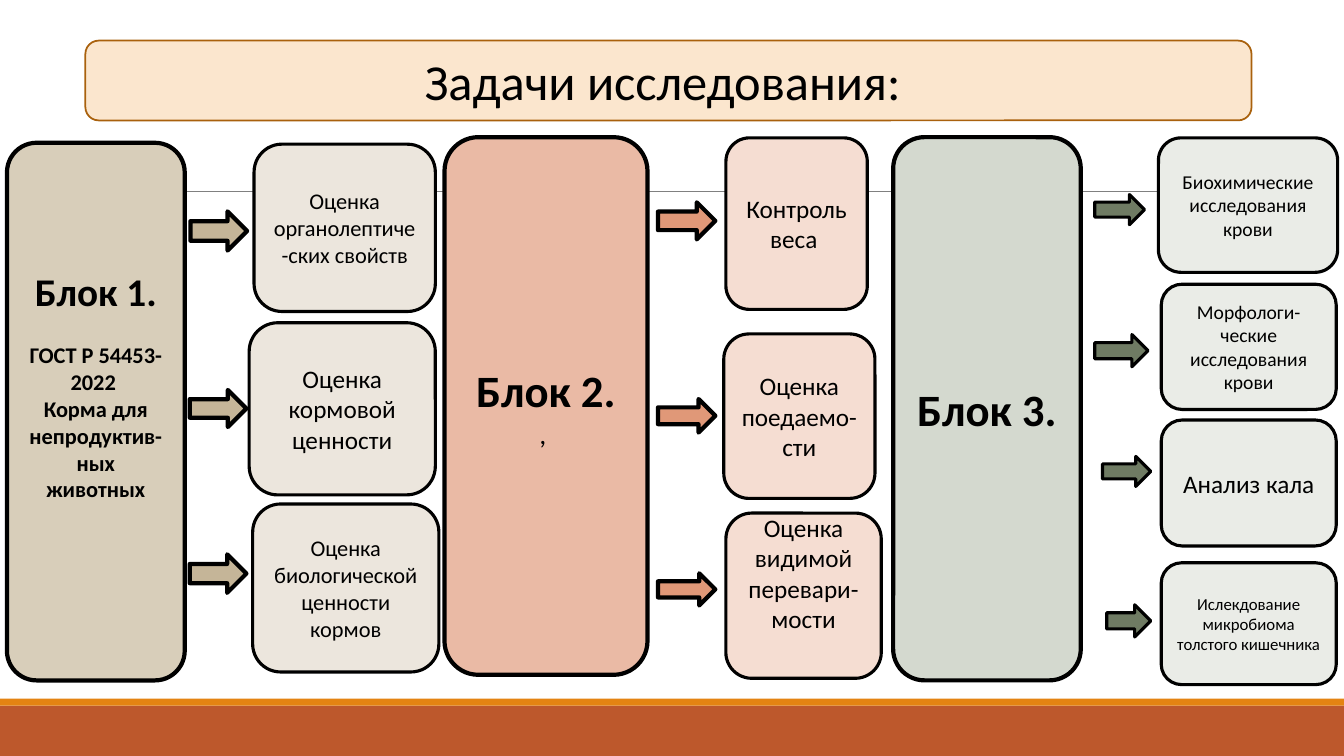
import pptx
import pptx.util
import pptx.dml.color
import pptx.enum.shapes
import pptx.enum.text
import pptx.oxml
from dataclasses import dataclass

Pt = pptx.util.Pt
Kind = pptx.enum.shapes.MSO_SHAPE


@dataclass(frozen=True)
class Theme:
    font: str = "Calibri"
    ink: str = "000000"
    rule: str = "808080"
    foot: str = "BD582C"
    strip: str = "E48312"
    peach: str = "FBE6CE"
    edge: str = "A9610D"
    sand: tuple = ("D8CEBA", "C5B598", "ECE6DD")
    coral: tuple = ("EABAA5", "E09878", "F5DDD2")
    sage: tuple = ("D4D9CF", "6F7B63", "EAECE7")
    title: int = 36
    head: int = 32
    lead: int = 28
    sign: int = 20
    large: int = 18
    body: int = 16
    small: int = 14
    tiny: int = 12
    thick: float = 3
    thin: float = 2.25


class Board:
    def __init__(self, slide, theme):
        self.slide = slide
        self.theme = theme

    def tint(self, code):
        return pptx.dml.color.RGBColor.from_string(code)

    def shape(self, kind, area, fill, line=None, width=0):
        item = self.slide.shapes.add_shape(kind, *map(Pt, area))
        item.shadow.inherit = False
        item.fill.solid()
        item.fill.fore_color.rgb = self.tint(fill)
        if line:
            item.line.color.rgb = self.tint(line)
            item.line.width = Pt(width)
        else:
            item.line.fill.background()
        return item

    def band(self, area, fill):
        self.shape(Kind.RECTANGLE, area, fill)

    def rule(self, left, right, top):
        line = self.slide.shapes.add_connector(
            pptx.enum.shapes.MSO_CONNECTOR.STRAIGHT,
            Pt(left), Pt(top), Pt(right), Pt(top))
        line.line.color.rgb = self.tint(self.theme.rule)
        line.line.width = Pt(0.5)
        effect = pptx.oxml.parse_xml(
            '<a:effectLst xmlns:a="http://schemas.openxmlformats.org/drawingml/2006/main"/>')
        line._element.spPr.append(effect)

    def box(self, area, fill, line, width, paras, base=3.6):
        item = self.shape(Kind.ROUNDED_RECTANGLE, area, fill, line, width)
        frame = item.text_frame
        frame.word_wrap = True
        frame.vertical_anchor = pptx.enum.text.MSO_ANCHOR.MIDDLE
        frame.margin_bottom = Pt(base)
        frame.text = "\n".join(text for text, *_ in paras)
        for para, (_, size, bold, gap) in zip(frame.paragraphs, paras):
            para.alignment = pptx.enum.text.PP_ALIGN.CENTER
            para.space_before = Pt(gap)
            font = para.runs[0].font
            font.name = self.theme.font
            font.size = Pt(size)
            font.bold = bold
            font.color.rgb = self.tint(self.theme.ink)

    def block(self, area, fill, paras, base=3.6):
        self.box(area, fill, self.theme.ink, self.theme.thick, paras, base)

    def card(self, area, fill, text, size, base=3.6):
        paras = [(part, size, False, 0) for part in text.split("\n")]
        self.box(area, fill, self.theme.ink, self.theme.thin, paras, base)

    def arrow(self, area, fill, width):
        self.shape(Kind.RIGHT_ARROW, area, fill, self.theme.ink, width)

    def group(self, hues, area, paras, base, width, arrows, cards):
        dark, mid, pale = hues
        self.block(area, dark, paras, base)
        for spot in arrows:
            self.arrow(spot, mid, width)
        for spot, *rest in cards:
            self.card(spot, pale, *rest)


def main():
    deck = pptx.Presentation()
    deck.slide_width, deck.slide_height = Pt(960), Pt(540)
    look = Theme()
    board = Board(deck.slides.add_slide(deck.slide_layouts[6]), look)

    board.band((0, 504, 960, 36), look.foot)
    board.band((0, 499, 960, 5), look.strip)
    board.rule(94.5, 879, 136.8)
    board.box((61, 29, 833, 57), look.peach, look.edge, 1.25,
              [("Задачи исследования: ", look.title, False, 0)])

    board.group(
        look.sand, (5, 102, 127, 384),
        [("Блок 1.", look.lead, True, 0),
         ("ГОСТ Р 54453-2022 ", look.body, True, 19.5),
         ("Корма для непродуктив-ных животных", look.body, True, 0)],
        42, look.thick,
        [(136, 151, 40.5, 28), (135.5, 278.5, 40.5, 26.5), (135.5, 396, 40.5, 27.5)],
        [((181.5, 103, 129.5, 119.5), "Оценка органолептиче-ских свойств", look.body),
         ((178, 230.5, 133, 123), "Оценка кормовой ценности", look.large),
         ((180.5, 360, 133, 120), "Оценка биологической ценности кормов", look.body)])

    board.group(
        look.coral, (317.5, 98, 145, 384),
        [("Блок 2.", look.head, True, 0), (", ", look.sign, False, 0)],
        3.6, look.thick,
        [(470, 144.5, 41, 26.5), (470, 285, 41, 24), (470, 409.5, 41, 23)],
        [((518.5, 98.5, 101, 122.5), "Контроль веса ", look.large),
         ((517, 238.5, 108, 117.5), "Оценка поедаемо-сти", look.large),
         ((518.5, 366.5, 111, 118), "Оценка видимой перевари-\nмости", look.large, 36)])

    board.group(
        look.sage, (638, 98, 134, 388),
        [("Блок 3. ", look.head, True, 0)],
        3.6, look.thin,
        [(782, 139, 35.5, 21.5), (782, 239, 38, 23),
         (787.5, 326, 34.5, 21.5), (790.5, 432, 31.5, 23)],
        [((827.5, 98.5, 128, 96), "Биохимические исследования крови", look.small),
         ((829.5, 203, 125, 89.5), "Морфологи-ческие исследования крови", look.small),
         ((829.5, 300, 125, 90), "Анализ кала", look.large),
         ((829.5, 402, 125, 87), "Ислекдование микробиома толстого кишечника", look.tiny)])

    deck.save("out.pptx")


if __name__ == "__main__":
    main()
